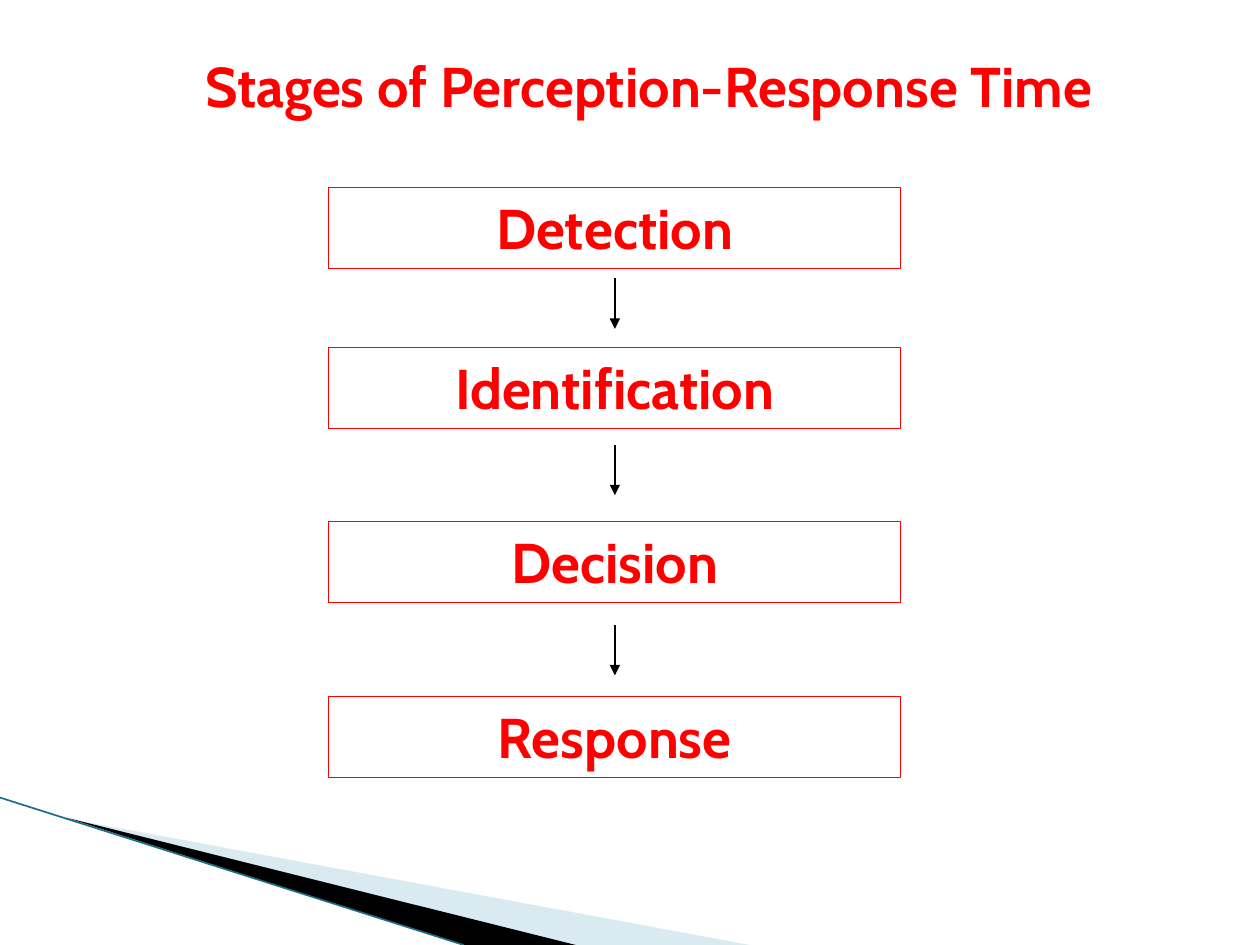
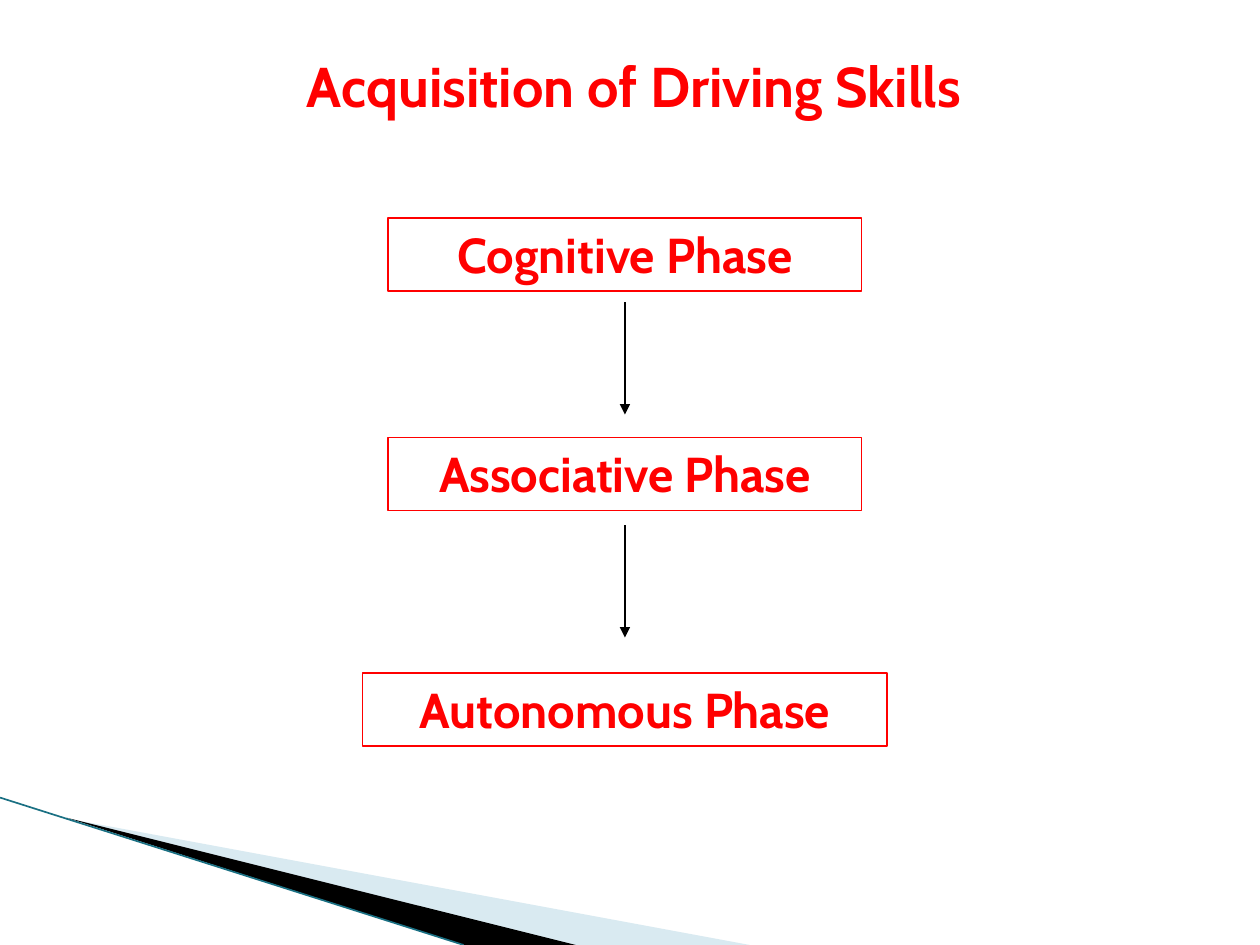
"""Build two flow slides on perception-response time and driving skills."""
from lxml import etree
from pptx import Presentation
from pptx.dml.color import RGBColor
from pptx.enum.shapes import MSO_CONNECTOR as CONN, MSO_SHAPE as SHAPE
from pptx.enum.text import MSO_ANCHOR as ANCHOR, MSO_AUTO_SIZE as AUTO, PP_ALIGN as ALIGN
from pptx.oxml.ns import qn
from pptx.util import Inches, Pt

COLORS = {name: RGBColor.from_string(value) for name, value in {
    "red": "FF0000", "black": "000000", "pale": "A0CBDC", "teal": "1A7083"}.items()}
FONT = "Cabin"
W, H = 10, 7.5

BANDS = [
    ("pale", 40, [(0.55, 6.5), (5.95, H), (4.56, H)]),
    ("black", 100, [(0.53, 6.49), (4.57, H), (3.68, H)]),
]
SLIDES = [
    {"title": "Stages of Perception-Response Time", "title_left": 0.76, "title_width": 8.78,
     "center": 4.88, "size": 32, "box_height": 0.64, "arrow_length": 0.4,
     "boxes": [("Detection", 1.49, 4.54), ("Identification", 2.76, 4.54),
               ("Decision", 4.14, 4.54), ("Response", 5.53, 4.54)],
     "arrows": [2.21, 3.53, 4.96]},
    {"title": "Acquisition of Driving Skills", "title_left": 1.51, "title_width": 7.05,
     "center": 4.96, "size": 28, "box_height": 0.58, "arrow_length": 0.89,
     "boxes": [("Cognitive Phase", 1.73, 3.76), ("Associative Phase", 3.47, 3.76),
               ("Autonomous Phase", 5.34, 4.16)],
     "arrows": [2.4, 4.17]},
]


def write(sp, text, size):
    tf = sp.text_frame
    tf.word_wrap = True
    tf.auto_size = AUTO.NONE
    tf.vertical_anchor = ANCHOR.TOP
    p = tf.paragraphs[0]
    p.alignment = ALIGN.CENTER
    r = p.add_run()
    r.text = text
    r.font.name = FONT
    r.font.size = Pt(size)
    r.font.bold = True
    r.font.color.rgb = COLORS["red"]


def add_line(s, x1, y1, x2, y2, color, width):
    ln = s.shapes.add_connector(CONN.STRAIGHT, Inches(x1), Inches(y1), Inches(x2), Inches(y2))
    ln.line.color.rgb = COLORS[color]
    ln.line.width = Pt(width)
    etree.SubElement(ln.element.spPr, qn("a:effectLst"))
    return ln


prs = Presentation()
prs.slide_width, prs.slide_height = Inches(W), Inches(H)

for page in SLIDES:
    s = prs.slides.add_slide(prs.slide_layouts[5])

    for color, opacity, points in BANDS:
        corners = [(Inches(x), Inches(y)) for x, y in points]
        fb = s.shapes.build_freeform(*corners[0])
        fb.add_line_segments(corners[1:], close=True)
        sp = fb.convert_to_shape()
        sp.shadow.inherit = False
        sp.fill.solid()
        sp.fill.fore_color.rgb = COLORS[color]
        sp.line.fill.background()
        if opacity < 100:
            clr = sp.element.spPr.find(qn("a:solidFill")).find(qn("a:srgbClr"))
            etree.SubElement(clr, qn("a:alpha"), val=str(opacity * 1000))
    add_line(s, 0, 6.33, 3.68, H, "teal", 0.95)

    title = s.shapes.title
    title.left, title.top = Inches(page["title_left"]), Inches(0.36)
    title.width, title.height = Inches(page["title_width"]), Inches(0.64)
    write(title, page["title"], 32)

    for text, top, width in page["boxes"]:
        sp = s.shapes.add_shape(SHAPE.RECTANGLE, Inches(page["center"] - width / 2),
                                Inches(top), Inches(width), Inches(page["box_height"]))
        sp.shadow.inherit = False
        sp.fill.background()
        sp.line.color.rgb = COLORS["red"]
        sp.line.width = Pt(0.75)
        write(sp, text, page["size"])

    for top in page["arrows"]:
        arrow = add_line(s, page["center"], top, page["center"], top + page["arrow_length"],
                         "black", 0.75)
        etree.SubElement(arrow.element.spPr.find(qn("a:ln")), qn("a:tailEnd"), type="triangle")

prs.save("out.pptx")
